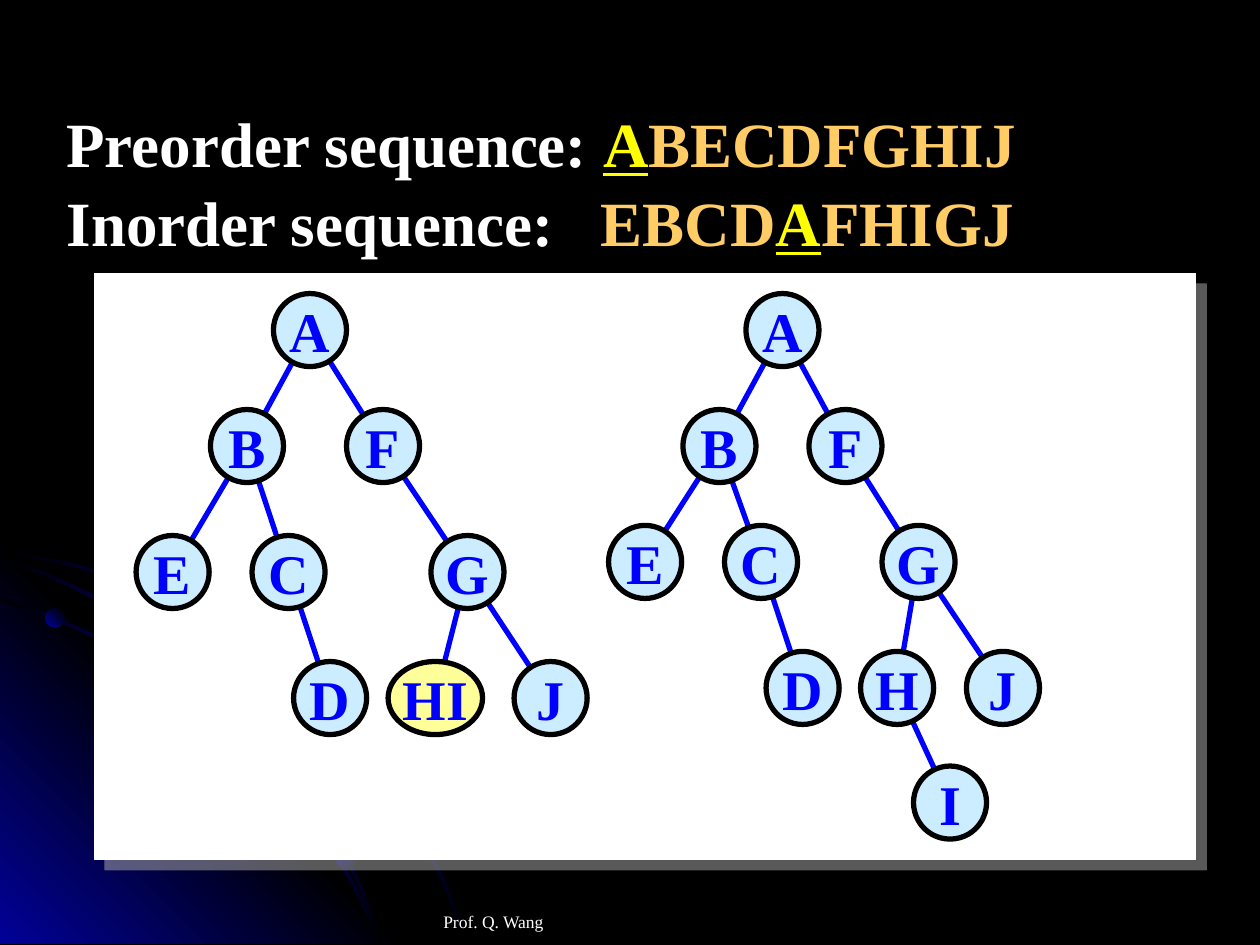
import pptx
import pptx.dml.color
import pptx.enum.shapes
import pptx.enum.text
import pptx.oxml
import pptx.oxml.ns
import pptx.util

Inches = pptx.util.Inches
Pt = pptx.util.Pt
RGBColor = pptx.dml.color.RGBColor
MSO_SHAPE = pptx.enum.shapes.MSO_SHAPE
MSO_ANCHOR = pptx.enum.text.MSO_ANCHOR

BLACK = RGBColor(0x00, 0x00, 0x00)
WHITE = RGBColor(0xFF, 0xFF, 0xFF)
NAVY = RGBColor(0x01, 0x01, 0x99)
BLUE = RGBColor(0x00, 0x00, 0xFF)
PALE_BLUE = RGBColor(0xCC, 0xEC, 0xFF)
PALE_YELLOW = RGBColor(0xFF, 0xFF, 0x99)
YELLOW = RGBColor(0xFF, 0xFF, 0x00)
ORANGE = RGBColor(0xFF, 0xCC, 0x66)
SHADOW_GRAY = RGBColor(0xB2, 0xB2, 0xB2)

FONT = "Times New Roman"
NODE = 0.58

OUTER_ARC = [(0, 4.38), (0.56, 4.49), (0.97, 4.61), (1.35, 4.78), (1.73, 4.99),
             (2.08, 5.23), (2.41, 5.49), (2.71, 5.79), (2.98, 6.12), (3.23, 6.49),
             (3.37, 6.73), (3.5, 6.98), (3.6, 7.23), (3.7, 7.49)]
INNER_ARC = [(0, 4.77), (0.39, 4.9), (0.77, 5.07), (1.15, 5.28), (1.5, 5.51),
             (1.83, 5.78), (2.13, 6.08), (2.4, 6.41), (2.65, 6.77), (2.85, 7.14),
             (3.01, 7.49)]
MIDDLE_ARC = [(0, 4.44), (0.36, 4.57), (0.74, 4.75), (1.09, 4.94), (1.42, 5.18),
              (1.73, 5.44), (2.02, 5.75), (2.27, 6.05), (2.52, 6.41), (2.67, 6.67),
              (2.8, 6.94), (2.92, 7.22), (3.01, 7.49)]

PARTIAL_NODES = {"A": (1.09, 0), "B": (0.59, 0.92), "F": (1.67, 0.92),
                 "E": (0, 1.92), "C": (0.92, 1.92), "G": (2.34, 1.92),
                 "D": (1.25, 2.92), "HI": (2, 2.92), "J": (3, 2.92)}
PARTIAL_EDGES = ["A B", "A F", "B E", "B C", "F G", "C D", "G HI", "G J"]
FULL_NODES = {"A": (1.09, 0), "B": (0.59, 0.92), "F": (1.59, 0.92),
              "E": (0, 1.84), "C": (0.92, 1.84), "G": (2.17, 1.84),
              "D": (1.25, 2.84), "H": (2, 2.84), "J": (2.84, 2.84),
              "I": (2.42, 3.75)}
FULL_EDGES = ["A B", "A F", "B E", "B C", "F G", "C D", "G H", "G J", "H I"]

SEQUENCES = [
    [("Preorder sequence: ", WHITE), ("A", YELLOW), ("BECDFGHIJ", ORANGE)],
    [("Inorder sequence:\t", WHITE), ("EBCD", ORANGE), ("A", YELLOW), ("FHIGJ", ORANGE)],
]


def add_run(paragraph, text, size, color, bold=False):
    run = paragraph.add_run()
    run.text = text
    run.font.name = FONT
    run.font.size = Pt(size)
    run.font.bold = bold
    run.font.color.rgb = color
    return run


def add_effects(shape, content=""):
    shape._element.spPr.append(pptx.oxml.parse_xml(
        f'<a:effectLst {pptx.oxml.ns.nsdecls("a")}>{content}</a:effectLst>'))


def fill_gradient(shape, colors, angle):
    step = 100000 // (len(colors) - 1)
    stops = "".join(f'<a:gs pos="{i * step}"><a:srgbClr val="{color}"/></a:gs>'
                    for i, color in enumerate(colors))
    gradient = pptx.oxml.parse_xml(
        f'<a:gradFill {pptx.oxml.ns.nsdecls("a")}><a:gsLst>{stops}</a:gsLst>'
        f'<a:lin ang="{angle * 60000}" scaled="1"/></a:gradFill>')
    shape.fill.background()
    fill = shape._element.spPr.find(pptx.oxml.ns.qn("a:noFill"))
    fill.getparent().replace(fill, gradient)
    shape.line.fill.background()
    shape.shadow.inherit = False


def add_outline(shapes, points, left, top):
    corners = [(Inches(left + x), Inches(top + y)) for x, y in points]
    builder = shapes.build_freeform(*corners[0])
    builder.add_line_segments(corners[1:], close=True)
    return builder.convert_to_shape()


def add_backdrop(slide, left, top):
    shapes = slide.shapes.add_group_shape().shapes

    def add_arc(points):
        upper_edge = [(x + 0.02, y - 0.02) for x, y in reversed(points)]
        arc = add_outline(shapes, points + upper_edge, left, top)
        fill_gradient(arc, [BLACK, NAVY, BLACK], 45)

    add_arc(OUTER_ARC)
    corner = add_outline(shapes, [(3.22, 7.49), (0, 7.49), (0, 4.27)], left, top)
    fill_gradient(corner, [NAVY, BLACK, NAVY], 315)
    add_arc(INNER_ARC)
    add_arc(MIDDLE_ARC)
    for x, y, angle in [(0.36, 4.83, 315), (2.67, 6.74, 45)]:
        planet = shapes.add_shape(MSO_SHAPE.OVAL, Inches(left + x), Inches(top + y),
                                  Inches(0.15), Inches(0.15))
        fill_gradient(planet, [NAVY, BLACK], angle)


def add_footer(slide, left, top, width, height):
    footer = slide.shapes.add_textbox(Inches(left), Inches(top), Inches(width), Inches(height))
    frame = footer.text_frame
    frame.word_wrap = True
    frame.vertical_anchor = MSO_ANCHOR.BOTTOM
    frame.margin_bottom = 0
    add_run(frame.paragraphs[0], "Prof. Q. Wang", 10, WHITE)


def add_panel(slide, left, top, width, height):
    panel = slide.shapes.add_shape(MSO_SHAPE.RECTANGLE, Inches(left), Inches(top),
                                   Inches(width), Inches(height))
    panel.fill.solid()
    panel.fill.fore_color.rgb = WHITE
    panel.line.color.rgb = WHITE
    panel.line.width = Pt(0.75)
    add_effects(panel, f'<a:outerShdw dist="{Pt(8.5)}" dir="2700000" algn="ctr" rotWithShape="0">'
                       f'<a:srgbClr val="{SHADOW_GRAY}"><a:alpha val="50000"/></a:srgbClr>'
                       '</a:outerShdw>')


def add_tree(slide, left, top, nodes, edges):
    shapes = slide.shapes.add_group_shape().shapes
    widths = {label: 0.75 if len(label) > 1 else NODE for label in nodes}

    def center(label):
        x, y = nodes[label]
        return Inches(left + x + widths[label] / 2), Inches(top + y + NODE / 2)

    for edge in edges:
        parent, child = edge.split()
        branch = shapes.add_connector(pptx.enum.shapes.MSO_CONNECTOR.STRAIGHT,
                                      *center(parent), *center(child))
        branch.line.color.rgb = BLUE
        branch.line.width = Pt(3)
        add_effects(branch)
    for label, (x, y) in nodes.items():
        node = shapes.add_shape(MSO_SHAPE.OVAL, Inches(left + x), Inches(top + y),
                                Inches(widths[label]), Inches(NODE))
        node.shadow.inherit = False
        node.fill.solid()
        node.fill.fore_color.rgb = PALE_YELLOW if len(label) > 1 else PALE_BLUE
        node.line.color.rgb = BLACK
        node.line.width = Pt(3)
        frame = node.text_frame
        frame.word_wrap = False
        frame.vertical_anchor = MSO_ANCHOR.MIDDLE
        frame.paragraphs[0].alignment = pptx.enum.text.PP_ALIGN.CENTER
        add_run(frame.paragraphs[0], label, 32, BLUE, bold=True)


def add_sequences(slide, left, top, width, height):
    heading = slide.shapes.add_textbox(Inches(left), Inches(top), Inches(width), Inches(height))
    frame = heading.text_frame
    frame.word_wrap = True
    for i, sequence in enumerate(SEQUENCES):
        paragraph = frame.add_paragraph() if i else frame.paragraphs[0]
        paragraph.space_before = Pt(2)
        paragraph._p.get_or_add_pPr().append(pptx.oxml.parse_xml(
            f'<a:tabLst {pptx.oxml.ns.nsdecls("a")}>'
            f'<a:tab pos="{Inches(4.24)}" algn="l"/></a:tabLst>'))
        for text, color in sequence:
            run = add_run(paragraph, text, 36, color, bold=True)
            run.font.underline = color == YELLOW


def main():
    presentation = pptx.Presentation()
    presentation.slide_width = Inches(10)
    presentation.slide_height = Inches(7.5)
    slide = presentation.slides.add_slide(presentation.slide_layouts[6])
    slide.background.fill.solid()
    slide.background.fill.fore_color.rgb = BLACK
    add_backdrop(slide, 0, 0)
    add_footer(slide, 3.42, 6.9, 3.17, 0.5)
    add_panel(slide, 0.75, 2.17, 8.74, 4.65)
    add_tree(slide, 1.08, 2.33, PARTIAL_NODES, PARTIAL_EDGES)
    add_tree(slide, 4.83, 2.33, FULL_NODES, FULL_EDGES)
    add_sequences(slide, 0.43, 0.78, 7.76, 1.3)
    presentation.save("out.pptx")


if __name__ == "__main__":
    main()
